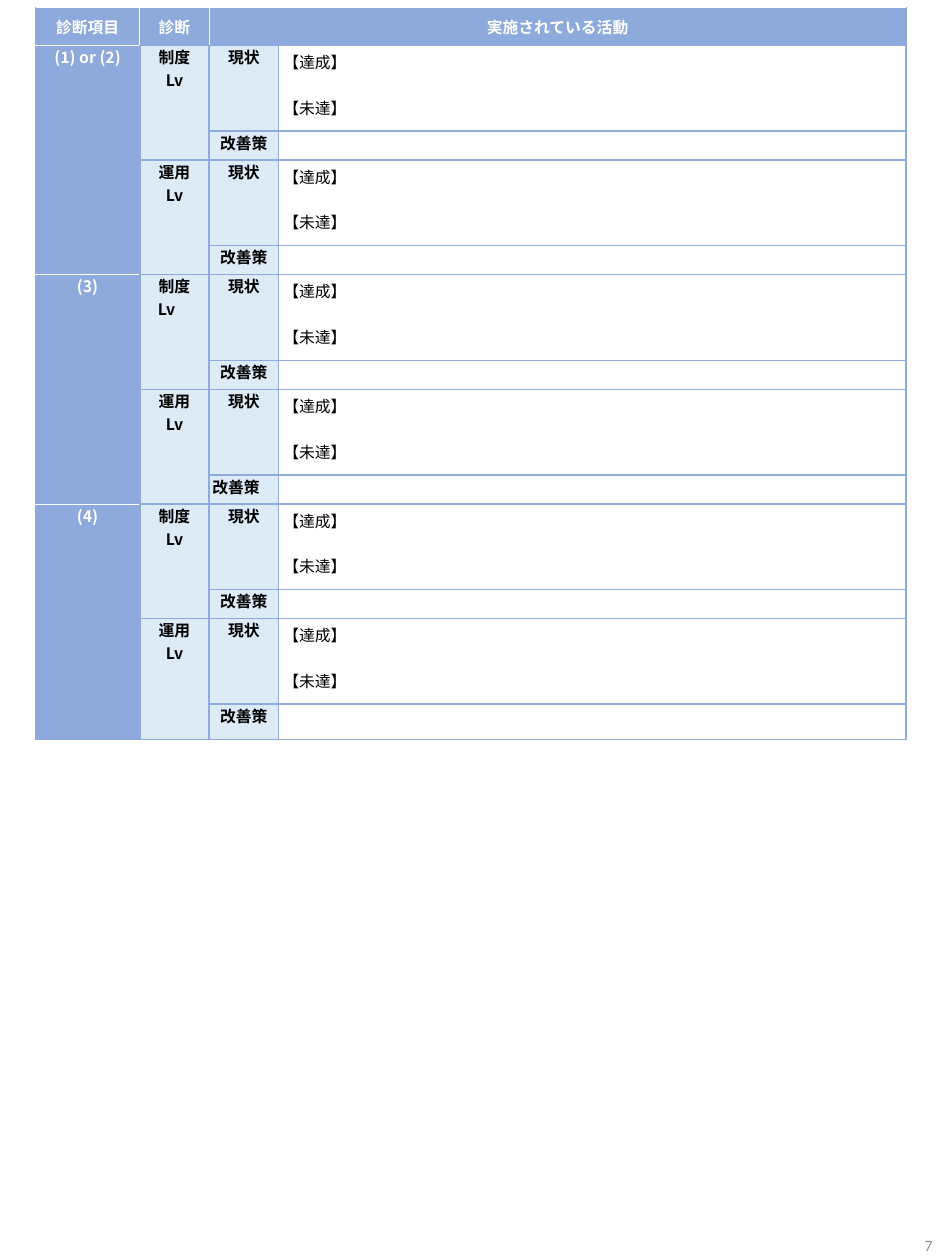
from dataclasses import dataclass

from lxml.etree import SubElement
from pptx import Presentation
from pptx.dml.color import RGBColor
from pptx.enum.text import MSO_ANCHOR as Anchor, PP_ALIGN as Align
from pptx.oxml import parse_xml
from pptx.oxml.ns import nsdecls, qn
from pptx.util import Inches, Pt


@dataclass(frozen=True)
class Theme:
    header: str = "8EA9DB"
    label: str = "DDEBF7"
    rule: str = "8FAADC"
    white: str = "FFFFFF"
    black: str = "000000"
    muted: str = "8C8C8C"
    font: str = "Noto Sans CJK JP"
    number_font: str = "Calibri"
    size: int = 9
    line_gap: int = 13


THEME = Theme()


@dataclass(frozen=True)
class Style:
    fill: str
    color: str = THEME.black
    bold: bool = True
    align: Align = Align.CENTER
    anchor: Anchor = Anchor.TOP
    inset: float = 0
    gap: int = 0


@dataclass(frozen=True)
class Edge:
    color: str
    width: float = 0.5


@dataclass(frozen=True)
class Borders:
    left: Edge
    right: Edge
    top: Edge
    bottom: Edge


@dataclass(frozen=True)
class Section:
    title: str
    level_suffix: str = ""
    last_plan_suffix: str = ""


HEADER = Style(THEME.header, THEME.white, anchor=Anchor.MIDDLE)
TITLE = Style(THEME.header, THEME.white)
LABEL = Style(THEME.label)
BODY = Style(THEME.white, bold=False, align=Align.LEFT, inset=0.04, gap=THEME.line_gap)
EMPTY = Style(THEME.white, bold=False, align=Align.LEFT)

RULE, WHITE, BLUE = Edge(THEME.rule, 1), Edge(THEME.white), Edge(THEME.header)
GRID = Borders(RULE, RULE, RULE, RULE)

SECTIONS = [Section("(1) or (2)"), Section("(3)", "　", "　"), Section("(4)")]
LEVELS = ["制度", "運用"]
COLUMNS = [0.83, 0.55, 0.55, 4.98]
HEADER_ROW, STATUS_ROW, PLAN_ROW, LAST_ROW = 0.3, 0.68, 0.23, 0.28


def style_paragraph(para, style: Style) -> None:
    para.alignment = style.align
    para.font.size = Pt(THEME.size)
    para.font.bold = style.bold
    para.font.name = THEME.font
    para.font.color.rgb = RGBColor.from_string(style.color)
    defaults = para.font._element
    defaults.find(qn("a:latin")).addnext(
        parse_xml(f'<a:ea {nsdecls("a")} typeface="{THEME.font}"/>'))
    if not para.runs:
        SubElement(para._p, qn("a:endParaRPr"), sz=str(THEME.size * 100))


def draw_borders(cell, borders: Borders) -> None:
    properties = cell._tc.get_or_add_tcPr()
    sides = [("L", borders.left), ("R", borders.right),
             ("T", borders.top), ("B", borders.bottom)]
    for index, (side, edge) in enumerate(sides):
        properties.insert(index, parse_xml(
            f'<a:ln{side} {nsdecls("a")} w="{Pt(edge.width)}"><a:solidFill>'
            f'<a:srgbClr val="{edge.color}"/></a:solidFill></a:ln{side}>'))


def fill_cell(table, row: int, column: int, text: str, style: Style,
              borders: Borders = GRID, rows: int = 1, columns: int = 1) -> None:
    cell = table.cell(row, column)
    if rows * columns > 1:
        cell.merge(table.cell(row + rows - 1, column + columns - 1))
    for r in range(row, row + rows):
        for c in range(column, column + columns):
            part = table.cell(r, c)
            part.fill.solid()
            part.fill.fore_color.rgb = RGBColor.from_string(style.fill)
            draw_borders(part, borders)
    cell.margin_left = cell.margin_right = Inches(style.inset)
    cell.margin_top = cell.margin_bottom = Inches(style.inset)
    cell.vertical_anchor = style.anchor
    cell.text = text
    for index, para in enumerate(cell.text_frame.paragraphs):
        style_paragraph(para, style)
        if index and style.gap:
            para.space_before = Pt(style.gap)


def add_diagnosis_table(page):
    heights = [HEADER_ROW] + [STATUS_ROW, PLAN_ROW] * len(SECTIONS) * len(LEVELS)
    heights[-1] = LAST_ROW
    frame = page.shapes.add_table(
        len(heights), len(COLUMNS), Inches(0.28), Inches(0.06),
        Inches(sum(COLUMNS)), Inches(sum(heights)))
    table = frame.table
    table.first_row = table.horz_banding = False
    style_id = table._tbl.tblPr.find(qn("a:tableStyleId"))
    style_id.text = "{2D5ABB26-0587-4C30-8999-92F81FD0307C}"
    for column, width in zip(table.columns, COLUMNS):
        column.width = Inches(width)
    for row, height in zip(table.rows, heights):
        row.height = Inches(height)
    return table


def fill_header(table) -> None:
    fill_cell(table, 0, 0, "診断項目", HEADER, Borders(BLUE, WHITE, WHITE, WHITE))
    fill_cell(table, 0, 1, "診断", HEADER, Borders(WHITE, WHITE, WHITE, RULE))
    fill_cell(table, 0, 2, "実施されている活動", HEADER,
              Borders(WHITE, BLUE, WHITE, RULE), columns=2)


def fill_section(table, top: int, section: Section, is_last: bool) -> None:
    bottom = BLUE if is_last else WHITE
    fill_cell(table, top, 0, section.title, TITLE,
              Borders(BLUE, RULE, WHITE, bottom), rows=2 * len(LEVELS))
    for index, level in enumerate(LEVELS):
        row = top + 2 * index
        level_suffix = section.level_suffix if index == 0 else ""
        plan_suffix = section.last_plan_suffix if index else ""
        fill_cell(table, row, 1, f"{level}\nLv{level_suffix}", LABEL, rows=2)
        fill_cell(table, row, 2, "現状", LABEL)
        fill_cell(table, row, 3, "【達成】\n【未達】", BODY)
        fill_cell(table, row + 1, 2, f"改善策{plan_suffix}", LABEL)
        fill_cell(table, row + 1, 3, "", EMPTY)


def add_page_number(page, number: int) -> None:
    box = page.shapes.add_textbox(Inches(6.95), Inches(9.68), Inches(0.55), Inches(0.33))
    box.text_frame.word_wrap = True
    box.text_frame.vertical_anchor = Anchor.BOTTOM
    para = box.text_frame.paragraphs[0]
    para.text = str(number)
    para.alignment = Align.RIGHT
    para.font.size = Pt(THEME.size)
    para.font.name = THEME.number_font
    para.font.color.rgb = RGBColor.from_string(THEME.muted)


def main() -> None:
    deck = Presentation()
    deck.slide_width, deck.slide_height = Inches(7.5), Inches(10)
    page = deck.slides.add_slide(deck.slide_layouts[6])
    add_page_number(page, 7)
    table = add_diagnosis_table(page)
    fill_header(table)
    for index, section in enumerate(SECTIONS):
        fill_section(table, 1 + index * 2 * len(LEVELS), section,
                     is_last=index == len(SECTIONS) - 1)
    deck.save("out.pptx")


if __name__ == "__main__":
    main()
